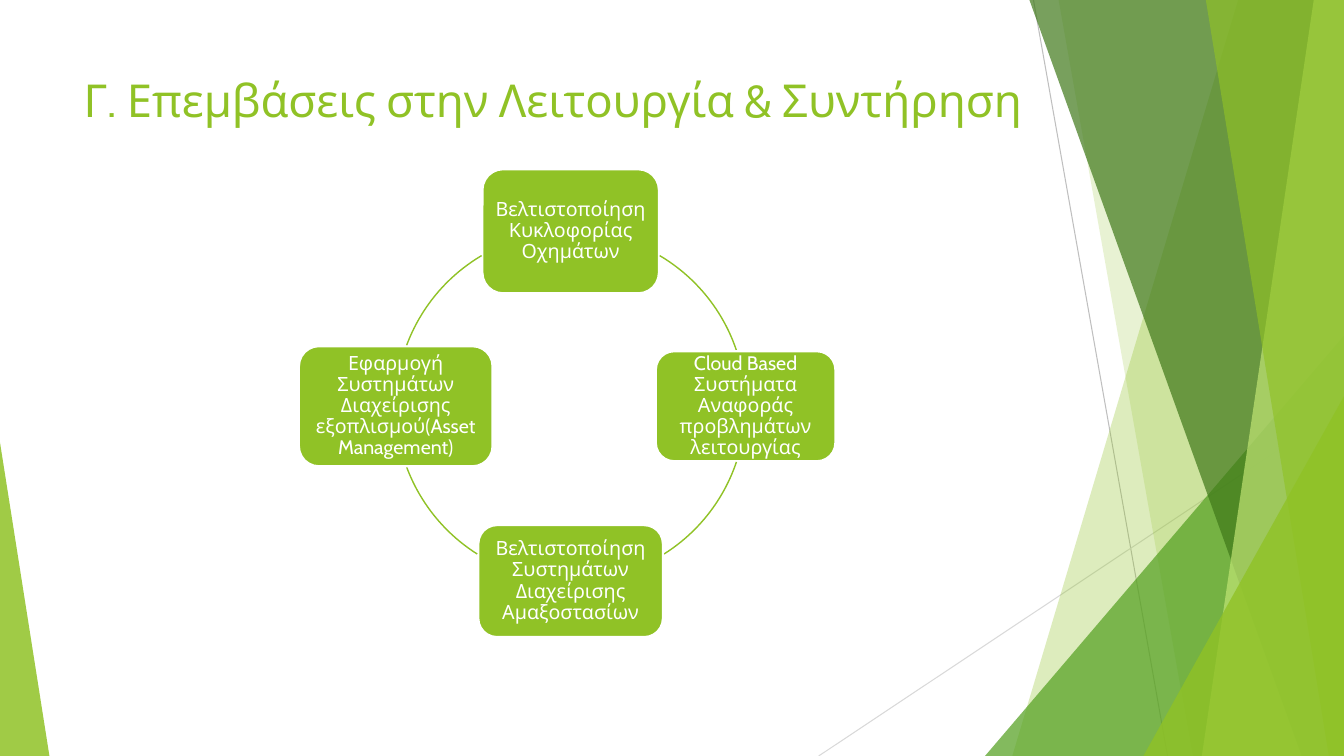
import pptx
import pptx.util
import pptx.dml.color
import pptx.enum.shapes
import pptx.enum.text
import pptx.oxml
import pptx.oxml.ns

Inches = pptx.util.Inches
Pt = pptx.util.Pt
RGBColor = pptx.dml.color.RGBColor
Shape = pptx.enum.shapes.MSO_SHAPE
Align = pptx.enum.text.PP_ALIGN
Anchor = pptx.enum.text.MSO_ANCHOR

WIDTH, HEIGHT = 13.33, 7.5
LIME = RGBColor(0x90, 0xC2, 0x26)
GREEN = RGBColor(0x54, 0xA0, 0x21)
FOREST = RGBColor(0x3F, 0x78, 0x19)
PALE_LIME = RGBColor(0xC0, 0xE4, 0x74)
GREY = RGBColor(0xBF, 0xBF, 0xBF)
LIGHT_GREY = RGBColor(0xD9, 0xD9, 0xD9)
WHITE = RGBColor(0xFF, 0xFF, 0xFF)


class SlideBuilder:
    font = "Cabin"

    def __init__(self, slide):
        self.slide = slide
        self.shapes = slide.shapes

    def add_run(self, paragraph, text, size, color):
        run = paragraph.add_run()
        run.text = text
        run.font.name = self.font
        run.font.size = Pt(size)
        run.font.color.rgb = color

    def paint(self, shape, color, opacity=100):
        shape.shadow.inherit = False
        shape.line.fill.background()
        shape.fill.solid()
        shape.fill.fore_color.rgb = color
        if opacity < 100:
            color_element = shape.fill._xPr.find(".//" + pptx.oxml.ns.qn("a:srgbClr"))
            color_element.append(pptx.oxml.parse_xml(
                f'<a:alpha {pptx.oxml.ns.nsdecls("a")} val="{opacity * 1000}"/>'))

    def title(self, text, left, top, width, height):
        shape = self.shapes.title
        shape.left, shape.top = Inches(left), Inches(top)
        shape.width, shape.height = Inches(width), Inches(height)
        frame = shape.text_frame
        frame.word_wrap = True
        frame.auto_size = pptx.enum.text.MSO_AUTO_SIZE.NONE
        frame.vertical_anchor = Anchor.TOP
        paragraph = frame.paragraphs[0]
        paragraph.alignment = Align.LEFT
        self.add_run(paragraph, text, 32.4, LIME)

    def line(self, start, end, color):
        connector = self.shapes.add_connector(
            pptx.enum.shapes.MSO_CONNECTOR.STRAIGHT,
            *(Inches(value) for value in start + end))
        connector.line.color.rgb = color
        connector.line.width = Pt(0.75)
        connector._element.spPr.append(pptx.oxml.parse_xml(
            f'<a:effectLst {pptx.oxml.ns.nsdecls("a")}/>'))

    def band(self, top_left, bottom_left, color, opacity):
        """Full-height band that runs to the right edge of the slide."""
        builder = self.shapes.build_freeform(Inches(top_left), 0, scale=1.0)
        corners = [(WIDTH, 0), (WIDTH, HEIGHT), (bottom_left, HEIGHT)]
        builder.add_line_segments([(Inches(x), Inches(y)) for x, y in corners])
        self.paint(builder.convert_to_shape(), color, opacity)

    def triangle(self, left, width, height, apex, color, opacity):
        """Triangle that stands on the bottom edge of the slide."""
        shape = self.shapes.add_shape(
            Shape.ISOSCELES_TRIANGLE, Inches(left), Inches(HEIGHT - height),
            Inches(width), Inches(height))
        shape.adjustments[0] = apex
        self.paint(shape, color, opacity)

    def arc(self, center, radius, start, end):
        shape = self.shapes.add_shape(
            Shape.ARC, Inches(center[0] - radius), Inches(center[1] - radius),
            Inches(2 * radius), Inches(2 * radius))
        # Angles are stored in 1/60000 degree, adjustments in 1/100000
        shape.adjustments[0] = start * 0.6
        shape.adjustments[1] = end * 0.6
        shape.shadow.inherit = False
        shape.fill.background()
        shape.line.color.rgb = LIME
        shape.line.width = Pt(1)

    def node(self, text, center, width, height):
        shape = self.shapes.add_shape(
            Shape.ROUNDED_RECTANGLE, Inches(center[0] - width / 2),
            Inches(center[1] - height / 2), Inches(width), Inches(height))
        self.paint(shape, LIME)
        shape.line.color.rgb = WHITE
        shape.line.width = Pt(1.5)
        frame = shape.text_frame
        frame.word_wrap = True
        frame.vertical_anchor = Anchor.MIDDLE
        frame.margin_left = frame.margin_right = Inches(0.06)
        frame.margin_top = frame.margin_bottom = Inches(0.06)
        paragraph = frame.paragraphs[0]
        paragraph.alignment = Align.CENTER
        paragraph.line_spacing = 0.9
        self.add_run(paragraph, text, 14, WHITE)


def main():
    presentation = pptx.Presentation()
    presentation.slide_width = Inches(WIDTH)
    presentation.slide_height = Inches(HEIGHT)
    builder = SlideBuilder(presentation.slides.add_slide(presentation.slide_layouts[5]))

    # Facet decoration
    builder.line((10.25, 0), (11.58, HEIGHT), GREY)
    builder.line((WIDTH, 4.03), (8.12, HEIGHT), LIGHT_GREY)
    builder.band(12.28, 10.04, LIME, 30)
    builder.band(10.5, 11.83, LIME, 20)
    builder.triangle(9.77, 3.56, 4.17, 1, GREEN, 72)
    builder.band(10.21, 12.91, FOREST, 70)
    builder.band(13.03, 11.92, PALE_LIME, 70)
    builder.band(11.96, 13.18, LIME, 65)
    builder.triangle(11.34, 1.99, 3.57, 1, LIME, 80)
    builder.triangle(0, 0.49, 3.11, 0, LIME, 85)

    # Title
    builder.title("Γ. Επεμβάσεις στην Λειτουργία & Συντήρηση", 0.73, 0.67, 9.78, 1.18)

    # Cycle: nodes clockwise from the top, each followed by its arc
    center_x, center_y, radius = 5.66, 4.03, 1.735
    cycle = [
        ("Βελτιστοποίηση Κυκλοφορίας Οχημάτων", (0, -1), 1.75, 1.23, 300.6, 341.4),
        ("Cloud Based Συστήματα Αναφοράς προβλημάτων λειτουργίας",
         (1, 0), 1.78, 1.09, 18.6, 57.7),
        ("Βελτιστοποίηση Συστημάτων Διαχείρισης Αμαξοστασίων",
         (0, 1), 1.83, 1.11, 122.3, 159.6),
        ("Εφαρμογή Συστημάτων Διαχείρισης εξοπλισμού(Asset Management)",
         (-1, 0), 1.92, 1.19, 200.4, 239.4),
    ]
    for text, (across, down), width, height, start, end in cycle:
        node_center = (center_x + across * radius, center_y + down * radius)
        builder.node(text, node_center, width, height)
        builder.arc((center_x, center_y), radius, start, end)

    presentation.save("out.pptx")


if __name__ == "__main__":
    main()
